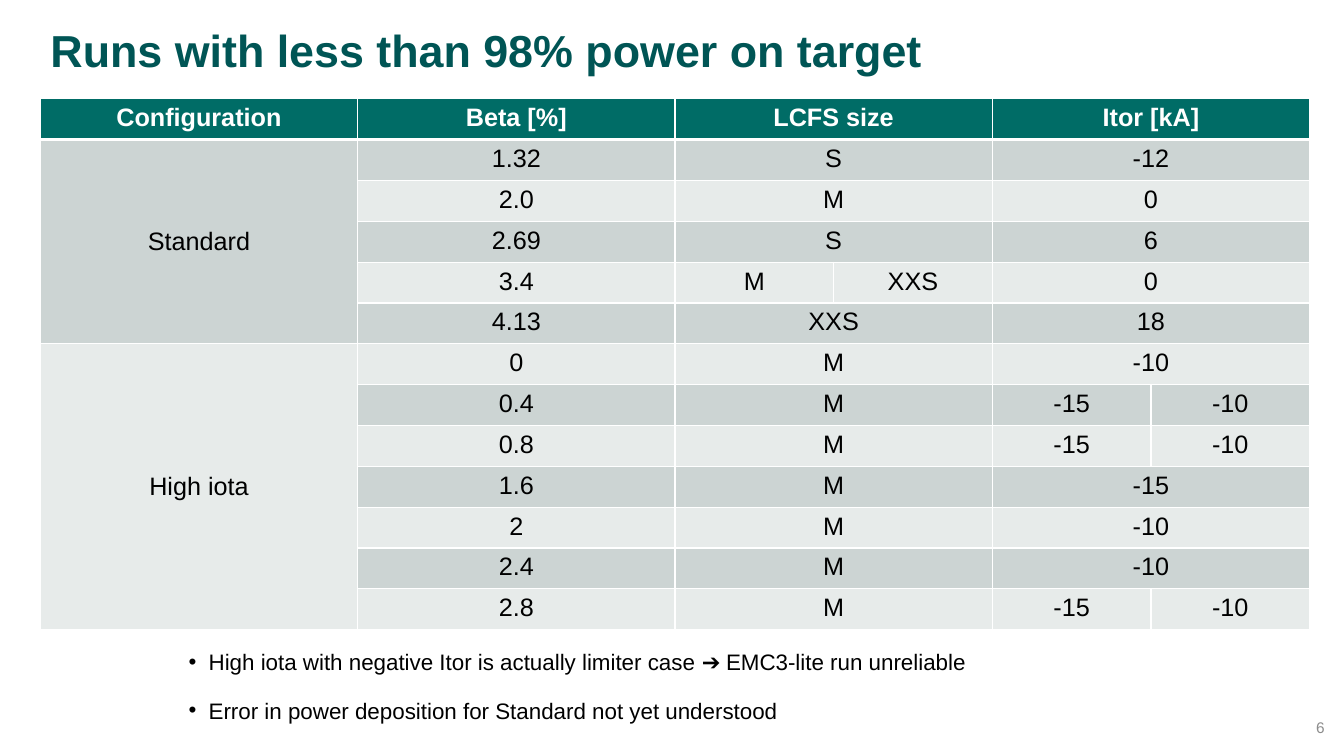
from lxml.etree import SubElement
from pptx import Presentation
from pptx.dml.color import RGBColor
from pptx.enum.text import MSO_ANCHOR, MSO_AUTO_SIZE, PP_ALIGN
from pptx.oxml.ns import qn
from pptx.util import Inches, Pt

COLORS = {"title": "005555", "head": "006C66", "dark": "CCD4D3", "light": "E7EBEA",
          "white": "FFFFFF", "black": "000000", "gray": "8C8C8C"}


def style(font, size, color, bold=False):
    font.name = "Arial"
    font.size = Pt(size)
    font.bold = bold
    font.color.rgb = RGBColor.from_string(COLORS[color])


def border(cell, side, width):
    line = SubElement(cell._tc.get_or_add_tcPr(), qn(f"a:ln{side}"), w=str(Pt(width)))
    fill = SubElement(line, qn("a:solidFill"))
    SubElement(fill, qn("a:srgbClr"), val=COLORS["white"])


prs = Presentation()
prs.slide_width, prs.slide_height = Inches(13.33), Inches(7.5)
slide = prs.slides.add_slide(prs.slide_layouts[5])

# Title
title = slide.shapes.title
title.left, title.top = Inches(0.4), Inches(0.32)
title.width, title.height = Inches(10.84), Inches(0.51)
frame = title.text_frame
frame.text = "Runs with less than 98% power on target"
frame.auto_size = MSO_AUTO_SIZE.NONE
frame.vertical_anchor = MSO_ANCHOR.TOP
para = frame.paragraphs[0]
para.alignment = PP_ALIGN.LEFT
para.line_spacing = Pt(28)
style(para.runs[0].font, 32, "title", True)

# Table: a tuple holds the values of a split cell
ROWS = [
    ("Configuration", "Beta [%]", "LCFS size", "Itor [kA]"),
    ("Standard", "1.32", "S", "-12"),
    ("", "2.0", "M", "0"),
    ("", "2.69", "S", "6"),
    ("", "3.4", ("M", "XXS"), "0"),
    ("", "4.13", "XXS", "18"),
    ("High iota", "0", "M", "-10"),
    ("", "0.4", "M", ("-15", "-10")),
    ("", "0.8", "M", ("-15", "-10")),
    ("", "1.6", "M", "-15"),
    ("", "2", "M", "-10"),
    ("", "2.4", "M", "-10"),
    ("", "2.8", "M", ("-15", "-10")),
]
GROUPS = {1: 5, 6: 12}  # first and last row of each configuration
WIDE = 12.59 / 4
table = slide.shapes.add_table(len(ROWS), 6, Inches(0.4), Inches(0.98),
                               Inches(12.59), Inches(5.27)).table
for col, width in zip(table.columns, [WIDE] * 2 + [WIDE / 2] * 4):
    col.width = Inches(width)

for r, (config, beta, *pairs) in enumerate(ROWS):
    texts = [config, beta]
    for c, pair in zip((2, 4), pairs):
        if isinstance(pair, tuple):
            texts += pair
        else:
            texts += [pair, ""]
            table.cell(r, c).merge(table.cell(r, c + 1))
    for c, text in enumerate(texts):
        cell = table.cell(r, c)
        for side in "LRTB":
            thick = (r, side) in ((0, "B"), (1, "T"))
            border(cell, side, 3 if thick else 1)
        shade = "head" if r == 0 else "dark" if r % 2 else "light"
        cell.fill.solid()
        cell.fill.fore_color.rgb = RGBColor.from_string(COLORS[shade])
        if text:
            cell.text_frame.text = text
            para = cell.text_frame.paragraphs[0]
            para.alignment = PP_ALIGN.CENTER
            style(para.runs[0].font, 18, "black" if r else "white", r == 0)

for first, last in GROUPS.items():
    table.cell(first, 0).merge(table.cell(last, 0))
    table.cell(first, 0).vertical_anchor = MSO_ANCHOR.MIDDLE

# Notes below the table and page number
NOTES = ["High iota with negative Itor is actually limiter case ➔ EMC3-lite run unreliable",
         "Error in power deposition for Standard not yet understood"]
notes = slide.shapes.add_textbox(Inches(1.87), Inches(6.38), Inches(7.86), Inches(0.81))
page = slide.shapes.add_textbox(Inches(12.78), Inches(7.15), Inches(0.36), Inches(0.16))
for box in (notes, page):
    frame = box.text_frame
    frame.margin_left = frame.margin_right = frame.margin_top = frame.margin_bottom = 0

notes.text_frame.word_wrap = False
notes.text_frame.text = "\n".join(NOTES)
for i, para in enumerate(notes.text_frame.paragraphs):
    props = para._p.get_or_add_pPr()
    props.set("marL", str(Inches(0.2)))
    props.set("indent", str(-Inches(0.2)))
    para.line_spacing = Pt(23)
    para.space_before = Pt(11.5 if i else 0)
    SubElement(props, qn("a:buFont"), typeface="Arial")
    SubElement(props, qn("a:buChar"), char="•")
    style(para.runs[0].font, 16, "black")

page.text_frame.word_wrap = True
page.text_frame.vertical_anchor = MSO_ANCHOR.BOTTOM
page.text_frame.text = "6"
para = page.text_frame.paragraphs[0]
para.alignment = PP_ALIGN.RIGHT
style(para.runs[0].font, 11, "gray")
para.runs[0].font._element.set("spc", "90")

prs.save("out.pptx")
